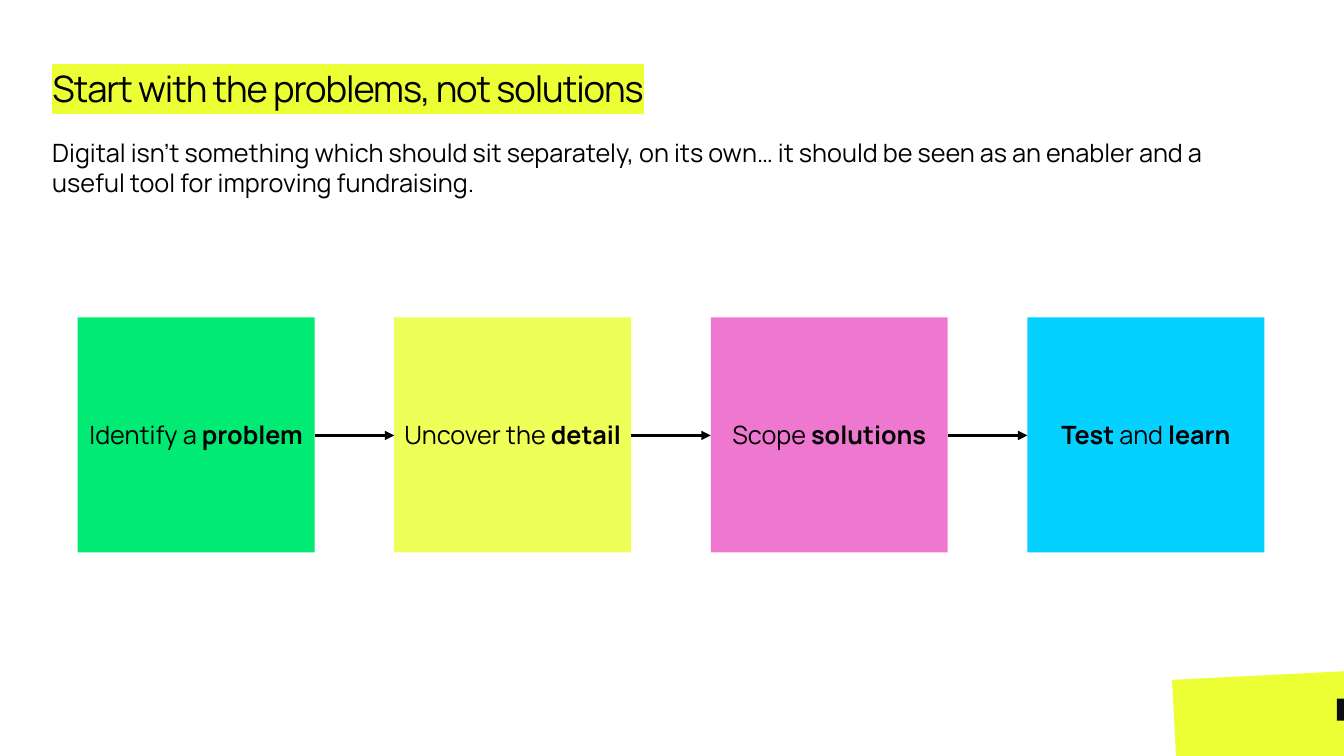
from dataclasses import dataclass

from lxml.etree import SubElement
from pptx import Presentation
from pptx.dml.color import RGBColor as Color
from pptx.enum.shapes import MSO_CONNECTOR as Connector, MSO_SHAPE as Preset
from pptx.enum.text import MSO_ANCHOR as Anchor, MSO_AUTO_SIZE as AutoSize, PP_ALIGN as Align
from pptx.oxml.ns import qn
from pptx.util import Emu, Pt


@dataclass(frozen=True)
class Theme:
    font: str = "Manrope"
    ink: str = "000000"
    mark: str = "0D0D0D"
    accent: str = "EBFF34"
    green: str = "01EB74"
    yellow: str = "EEFF57"
    pink: str = "EE77D0"
    blue: str = "04D1FF"
    title_size: float = 26
    body_size: float = 18
    line_width: float = 2.25


def px(length):
    """100 px to the inch."""
    return Emu(length * 9144)


class SlideBuilder:
    def __init__(self, presentation, theme):
        self.theme = theme
        self.slide = presentation.slides.add_slide(presentation.slide_layouts[5])

    def fill_text(self, frame, runs, size, align=Align.LEFT, **frame_format):
        """Fill a text frame with (text, bold) runs in one paragraph."""
        for name, value in {"word_wrap": True, **frame_format}.items():
            setattr(frame, name, value)
        paragraph = frame.paragraphs[0]
        paragraph.alignment = align
        for text, bold in runs:
            run = paragraph.add_run()
            run.text = text
            font_format = {"name": self.theme.font, "size": Pt(size), "bold": bold}
            for name, value in font_format.items():
                setattr(run.font, name, value)
            run.font.color.rgb = Color.from_string(self.theme.ink)
        return paragraph

    def title(self, left, top, width, height, text):
        shape = self.slide.shapes.title
        place = {"left": left, "top": top, "width": width, "height": height}
        for name, value in place.items():
            setattr(shape, name, px(value))
        paragraph = self.fill_text(
            shape.text_frame, [(text, False)], self.theme.title_size,
            auto_size=AutoSize.NONE, vertical_anchor=Anchor.TOP,
            margin_left=0, margin_top=px(15), margin_right=px(10), margin_bottom=0)
        # Tight letter spacing and a highlight behind the words
        properties = paragraph.runs[0].font._element
        properties.set("spc", "-80")
        highlight = SubElement(properties, qn("a:highlight"))
        SubElement(highlight, qn("a:srgbClr"), val=self.theme.accent)
        properties.find(qn("a:latin")).addprevious(highlight)

    def text(self, left, top, width, height, text):
        shape = self.slide.shapes.add_textbox(px(left), px(top), px(width), px(height))
        self.fill_text(shape.text_frame, [(text, False)], self.theme.body_size,
                       auto_size=AutoSize.SHAPE_TO_FIT_TEXT)

    def box(self, left, top, width, height, color, runs=(), rotation=0):
        shape = self.slide.shapes.add_shape(
            Preset.RECTANGLE, px(left), px(top), px(width), px(height))
        shape.shadow.inherit = False
        shape.rotation = rotation
        shape.fill.solid()
        shape.fill.fore_color.rgb = Color.from_string(color)
        shape.line.fill.background()
        if runs:
            self.fill_text(shape.text_frame, runs, self.theme.body_size, Align.CENTER,
                           vertical_anchor=Anchor.MIDDLE)

    def arrow(self, left, right, y):
        connector = self.slide.shapes.add_connector(
            Connector.STRAIGHT, px(left), px(y), px(right), px(y))
        connector.line.color.rgb = Color.from_string(self.theme.ink)
        connector.line.width = Pt(self.theme.line_width)
        properties = connector._element.spPr
        SubElement(properties.find(qn("a:ln")), qn("a:tailEnd"), type="triangle")
        SubElement(properties, qn("a:effectLst"))


def main():
    theme = Theme()
    presentation = Presentation()
    presentation.slide_width, presentation.slide_height = px(1333), px(750)
    builder = SlideBuilder(presentation, theme)

    # Corner decoration
    builder.box(1165, 670, 176, 102, theme.accent, rotation=357.1)
    builder.box(1326, 693, 8, 22, theme.mark)

    # Heading and introduction
    builder.title(52, 51, 693, 62, "Start with the problems, not solutions")
    builder.text(42, 131, 1233, 71,
                 "Digital isn’t something which should sit separately, on its own… "
                 "it should be seen as an enabler and a useful tool for improving fundraising.")

    # Four steps, joined by arrows
    steps = [
        (theme.green, [("Identify a ", False), ("problem", True)]),
        (theme.yellow, [("Uncover the ", False), ("detail", True)]),
        (theme.pink, [("Scope ", False), ("solutions", True)]),
        (theme.blue, [("Test", True), (" and ", False), ("learn", True)]),
    ]
    first_left, top, width, height, pitch = 77, 315, 235, 233, 314
    for index, (color, runs) in enumerate(steps):
        left = first_left + index * pitch
        builder.box(left, top, width, height, color, runs)
        if index:
            builder.arrow(left - pitch + width, left, top + height // 2 + 1)

    presentation.save("out.pptx")


if __name__ == "__main__":
    main()
